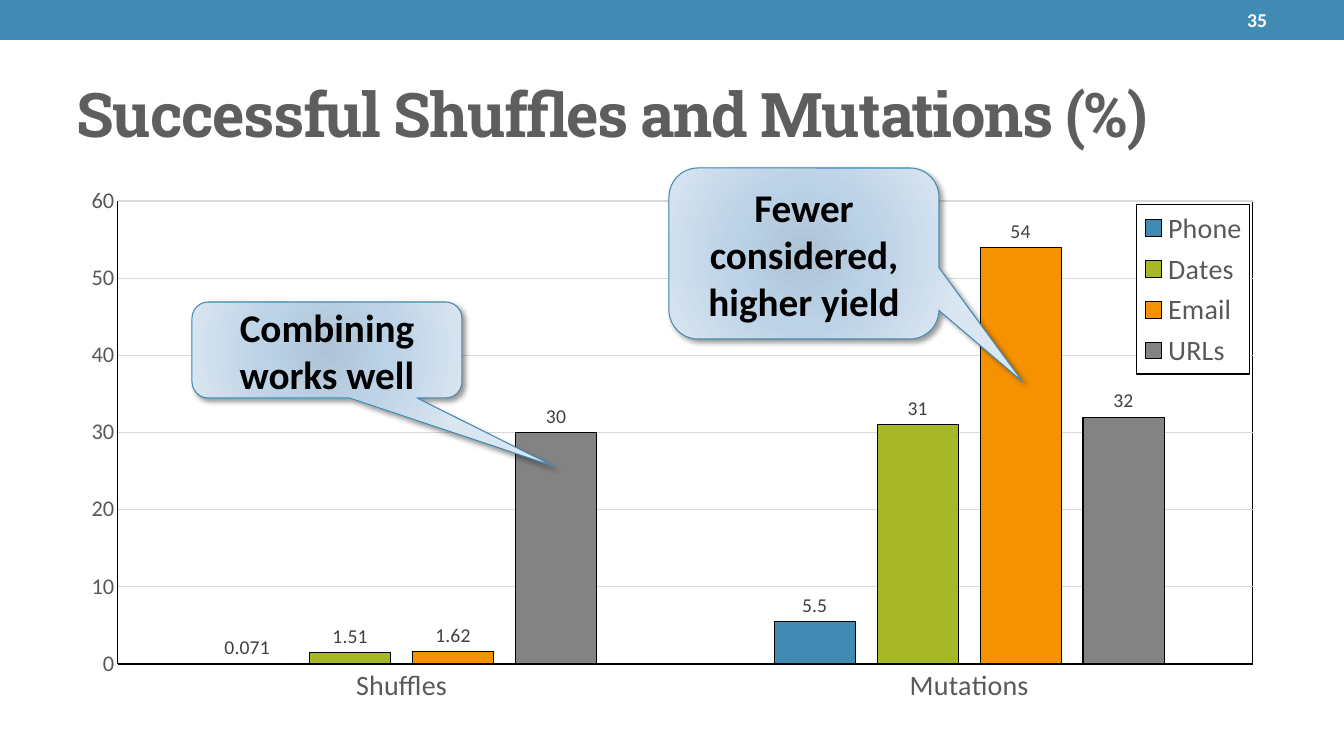
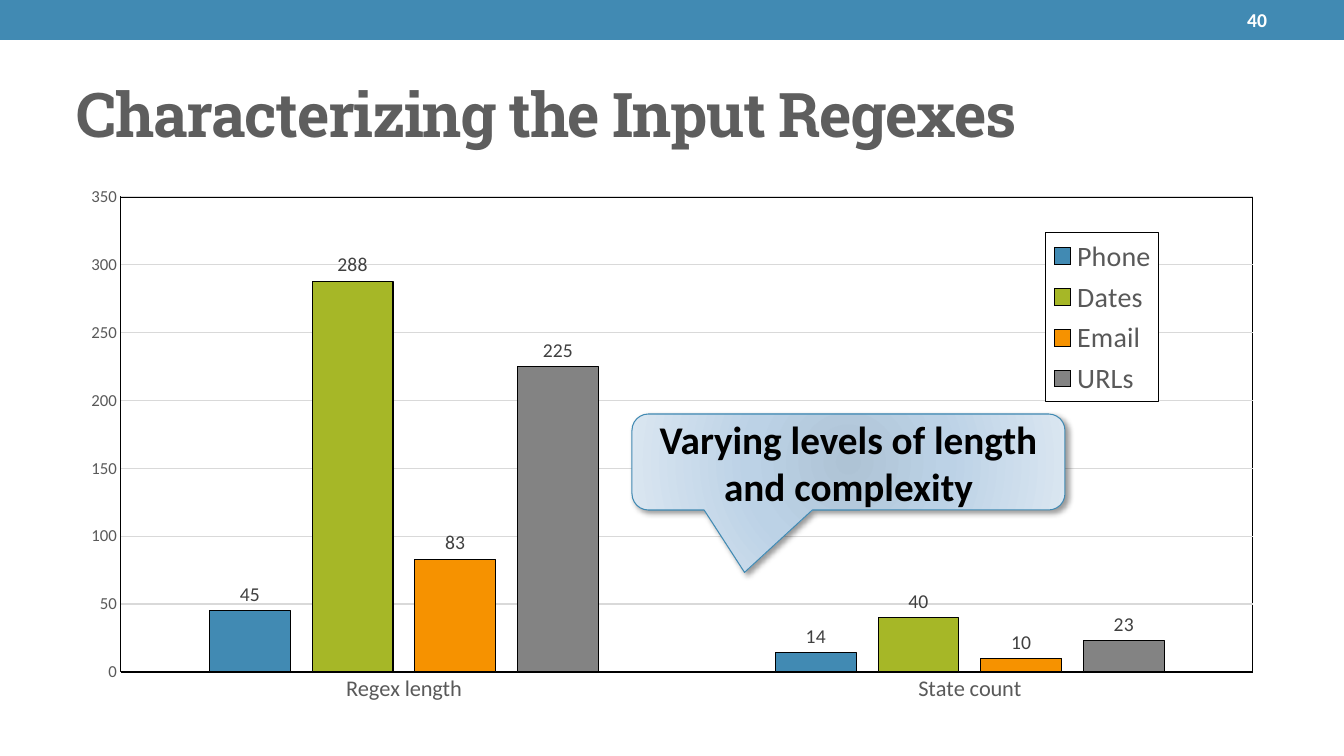
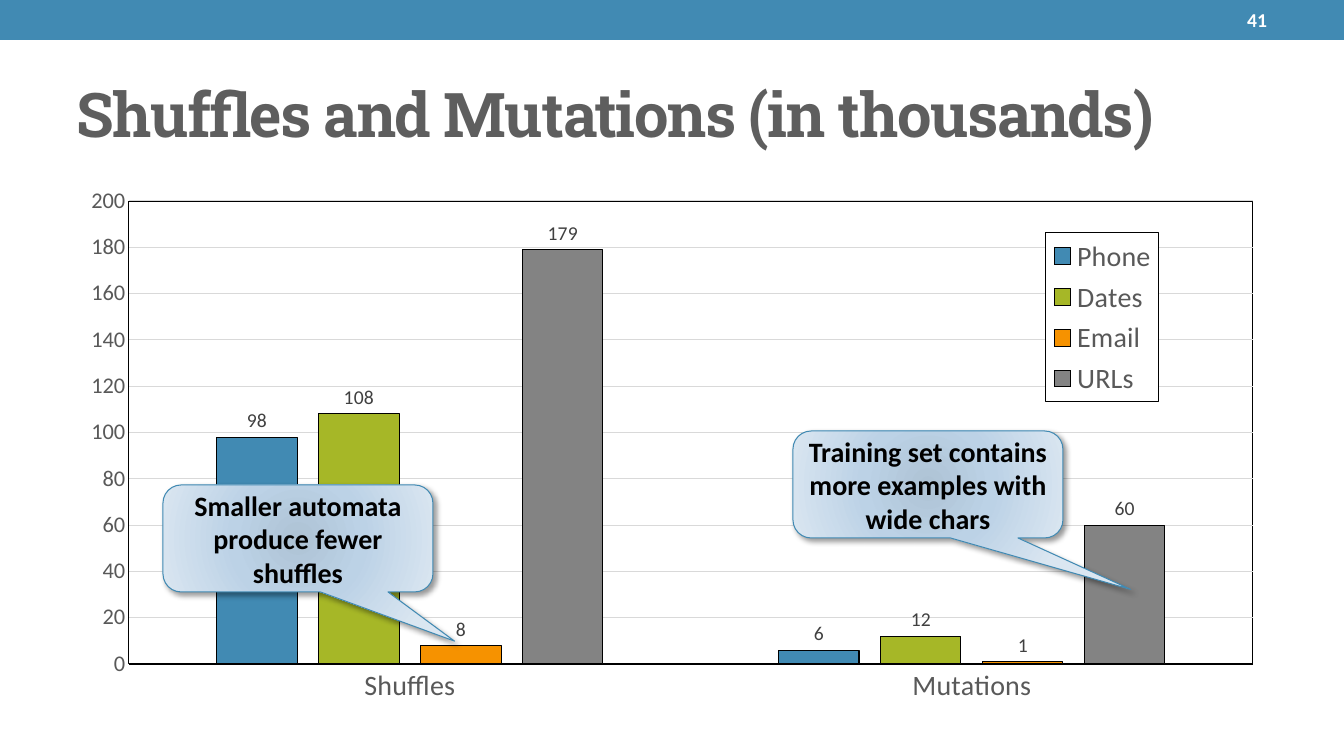
"""Build three slides that chart regex test results with callouts."""
from pptx import Presentation
from pptx.chart.data import CategoryChartData
from pptx.dml.color import RGBColor
from pptx.enum.chart import XL_CHART_TYPE, XL_LABEL_POSITION, XL_LEGEND_POSITION, XL_TICK_MARK
from pptx.enum.shapes import MSO_SHAPE
from pptx.enum.text import MSO_ANCHOR, PP_ALIGN
from pptx.oxml import parse_xml
from pptx.oxml.ns import nsdecls, qn
from pptx.util import Emu, Pt

BLUE = RGBColor(0x41, 0x8A, 0xB3)
GREEN = RGBColor(0xA6, 0xB7, 0x27)
ORANGE = RGBColor(0xF6, 0x92, 0x00)
GRAY = RGBColor(0x83, 0x83, 0x83)
TITLE_GRAY = RGBColor(0x5E, 0x5E, 0x5E)
AXIS_GRAY = RGBColor(0x59, 0x59, 0x59)
LABEL_GRAY = RGBColor(0x40, 0x40, 0x40)
GRID_GRAY = RGBColor(0xD9, 0xD9, 0xD9)
BLACK = RGBColor(0, 0, 0)
WHITE = RGBColor(0xFF, 0xFF, 0xFF)
GLOW_STOPS = [
    (0, RGBColor(0xAE, 0xC3, 0xD5)),
    (45, RGBColor(0xBC, 0xD2, 0xE6)),
    (100, RGBColor(0xDA, 0xE6, 0xF1)),
]

BODY_FONT = "Calibri"
TITLE_FONT = "Roboto Slab"
SLIDE_SIZE = (1344, 756)
BAND_BOX = (0, 0, 1344, 40)
TITLE_BOX = (67, 58, 1210, 109)
NUMBER_BOX = (1120, 2, 157, 36)
CHART_BOX = (67, 176, 1210, 537)
LEGEND_SIZE = (113, 169)
PLOT_RIGHT = 1253
SERIES_COLORS = {"Phone": BLUE, "Dates": GREEN, "Email": ORANGE, "URLs": GRAY}

SLIDES = [
    {
        "number": "35",
        "title": "Successful Shuffles and Mutations (%)",
        "categories": ["Shuffles", "Mutations"],
        "values": [(0.071, 5.5), (1.51, 31), (1.62, 54), (30, 32)],
        "scale": (60, 10),
        "axis_sizes": (20, 16),
        "plot": (118, 201, 664),
        "legend": (1137, 205),
        "callouts": [
            ("Combining works well", (192, 302, 270, 96), (0.84, 1.21), 28),
            ("Fewer considered, higher yield", (669, 168, 270, 171), (0.81, 0.75), 28),
        ],
    },
    {
        "number": "40",
        "title": "Characterizing the Input Regexes",
        "categories": ["Regex length", "State count"],
        "values": [(45, 14), (288, 40), (83, 10), (225, 23)],
        "scale": (350, 50),
        "axis_sizes": (16, 12),
        "plot": (121, 197, 672),
        "legend": (1046, 233),
        "callouts": [
            ("Varying levels of length and complexity", (632, 414, 433, 96), (-0.24, 1.15), 28),
        ],
    },
    {
        "number": "41",
        "title": "Shuffles and Mutations (in thousands)",
        "categories": ["Shuffles", "Mutations"],
        "values": [(98, 6), (108, 12), (8, 1), (179, 60)],
        "scale": (200, 20),
        "axis_sizes": (20, 16),
        "plot": (129, 201, 664),
        "legend": (1046, 233),
        "callouts": [
            ("Smaller automata produce fewer shuffles", (163, 485, 270, 107), (0.58, 0.96), 20),
            ("Training set contains more examples with wide chars",
             (793, 431, 270, 107), (0.75, 0.98), 20),
        ],
    },
]


def px(*lengths):
    return [Emu(round(length * 914400 / 100.8)) for length in lengths]


def set_all(target, values):
    for name, value in values.items():
        setattr(target, name, value)


def set_font(font, size, color, name=BODY_FONT, bold=False):
    set_all(font, {"size": Pt(size), "name": name, "bold": bold})
    font.color.rgb = color


def set_line(line, color, width):
    line.color.rgb = color
    line.width = Pt(width)


def write(shape, text, align, size, color, name=BODY_FONT):
    set_all(shape.text_frame, {"word_wrap": True, "vertical_anchor": MSO_ANCHOR.MIDDLE})
    para = shape.text_frame.paragraphs[0]
    para.alignment = align
    span = para.add_run()
    span.text = text
    set_font(span.font, size, color, name, True)
    return span


def add_frame(page, title, number):
    band = page.shapes.add_shape(MSO_SHAPE.RECTANGLE, *px(*BAND_BOX))
    band.shadow.inherit = False
    band.fill.solid()
    band.fill.fore_color.rgb = BLUE
    band.line.fill.background()
    heading = page.shapes.add_textbox(*px(*TITLE_BOX))
    span = write(heading, title, PP_ALIGN.LEFT, 44, TITLE_GRAY, TITLE_FONT)
    span.font._element.set("spc", "-100")
    write(page.shapes.add_textbox(*px(*NUMBER_BOX)), number, PP_ALIGN.RIGHT, 14, WHITE)


def layout_xml(left, top, width, height, target=""):
    chart_left, chart_top, chart_width, chart_height = CHART_BOX
    parts = {
        "x": (left - chart_left) / chart_width,
        "y": (top - chart_top) / chart_height,
        "w": width / chart_width,
        "h": height / chart_height,
    }
    modes = "".join(f'<c:{key}Mode val="edge"/>' for key in "xy")
    sizes = "".join(f'<c:{key} val="{part:.4f}"/>' for key, part in parts.items())
    return parse_xml(
        f'<c:layout {nsdecls("c")}><c:manualLayout>{target}{modes}{sizes}'
        "</c:manualLayout></c:layout>"
    )


def border_xml(fill):
    return parse_xml(
        f'<c:spPr {nsdecls("c", "a")}>{fill}<a:ln w="9525"><a:solidFill>'
        f'<a:srgbClr val="{BLACK}"/></a:solidFill></a:ln></c:spPr>'
    )


def drop_layout(element):
    for layout in element.findall(qn("c:layout")):
        element.remove(layout)


def style_axes(chart, spec_sizes, maximum, step):
    for axis, size in zip((chart.category_axis, chart.value_axis), spec_sizes):
        set_all(axis, {"major_tick_mark": XL_TICK_MARK.NONE, "minor_tick_mark": XL_TICK_MARK.NONE})
        set_font(axis.tick_labels.font, size, AXIS_GRAY)
    set_line(chart.category_axis.format.line, BLACK, 1)
    values = chart.value_axis
    set_all(values, {"minimum_scale": 0, "maximum_scale": maximum, "major_unit": step})
    values.format.line.fill.background()
    set_line(values.major_gridlines.format.line, GRID_GRAY, 0.75)


def style_series(plot):
    set_all(plot, {"gap_width": 219, "overlap": -27, "vary_by_categories": False})
    for series in plot.series:
        series.format.fill.solid()
        series.format.fill.fore_color.rgb = SERIES_COLORS[series.name]
        set_line(series.format.line, BLACK, 0.75)
        set_all(series, {"invert_if_negative": False})
        labels = series.data_labels
        set_all(labels, {"show_value": True, "position": XL_LABEL_POSITION.OUTSIDE_END})
        set_font(labels.font, 14, LABEL_GRAY)


def add_bars(page, content):
    data = CategoryChartData()
    data.categories = content["categories"]
    for name, values in zip(SERIES_COLORS, content["values"]):
        data.add_series(name, values)
    chart = page.shapes.add_chart(
        XL_CHART_TYPE.COLUMN_CLUSTERED, *px(*CHART_BOX), data
    ).chart
    set_all(chart, {"has_title": False, "has_legend": True})
    set_font(chart.font, 10, BLACK)
    style_axes(chart, content["axis_sizes"], *content["scale"])
    style_series(chart.plots[0])

    set_all(chart.legend, {"position": XL_LEGEND_POSITION.RIGHT, "include_in_layout": True})
    set_font(chart.legend.font, 20, AXIS_GRAY)
    legend = chart.legend._element
    drop_layout(legend)
    overlay = legend.find(qn("c:overlay"))
    overlay.addprevious(layout_xml(*content["legend"], *LEGEND_SIZE))
    overlay.addnext(border_xml(f'<a:solidFill><a:srgbClr val="{WHITE}"/></a:solidFill>'))

    left, top, bottom = content["plot"]
    area = chart._chartSpace.find(qn("c:chart")).find(qn("c:plotArea"))
    drop_layout(area)
    inner = '<c:layoutTarget val="inner"/>'
    area.insert(0, layout_xml(left, top, PLOT_RIGHT - left, bottom - top, inner))
    area.append(border_xml("<a:noFill/>"))


def add_callout(page, text, box, tip, size):
    callout = page.shapes.add_shape(MSO_SHAPE.ROUNDED_RECTANGULAR_CALLOUT, *px(*box))
    for index, value in enumerate((*tip, 0.17)):
        callout.adjustments[index] = value
    callout.shadow.inherit = False
    set_line(callout.line, BLUE, 0.75)
    stops = "".join(
        f'<a:gs pos="{place * 1000}"><a:srgbClr val="{color}"/></a:gs>'
        for place, color in GLOW_STOPS
    )
    properties = callout._element.spPr
    properties.find(qn("a:prstGeom")).addnext(parse_xml(
        f'<a:gradFill {nsdecls("a")} rotWithShape="1"><a:gsLst>{stops}</a:gsLst>'
        '<a:path path="circle"><a:fillToRect l="100000" t="100000" r="100000" b="100000"/>'
        "</a:path></a:gradFill>"
    ))
    properties.find(qn("a:effectLst")).append(parse_xml(
        f'<a:outerShdw {nsdecls("a")} blurRad="{Pt(4)}" dist="{Pt(3)}" dir="2700000" '
        f'algn="tl" rotWithShape="0"><a:srgbClr val="{BLACK}"><a:alpha val="40000"/>'
        "</a:srgbClr></a:outerShdw>"
    ))
    write(callout, text, PP_ALIGN.CENTER, size, BLACK)


def main():
    deck = Presentation()
    deck.slide_width, deck.slide_height = px(*SLIDE_SIZE)
    for content in SLIDES:
        page = deck.slides.add_slide(deck.slide_layouts[6])
        add_frame(page, content["title"], content["number"])
        add_bars(page, content)
        for callout in content["callouts"]:
            add_callout(page, *callout)
    deck.save("out.pptx")


if __name__ == "__main__":
    main()
